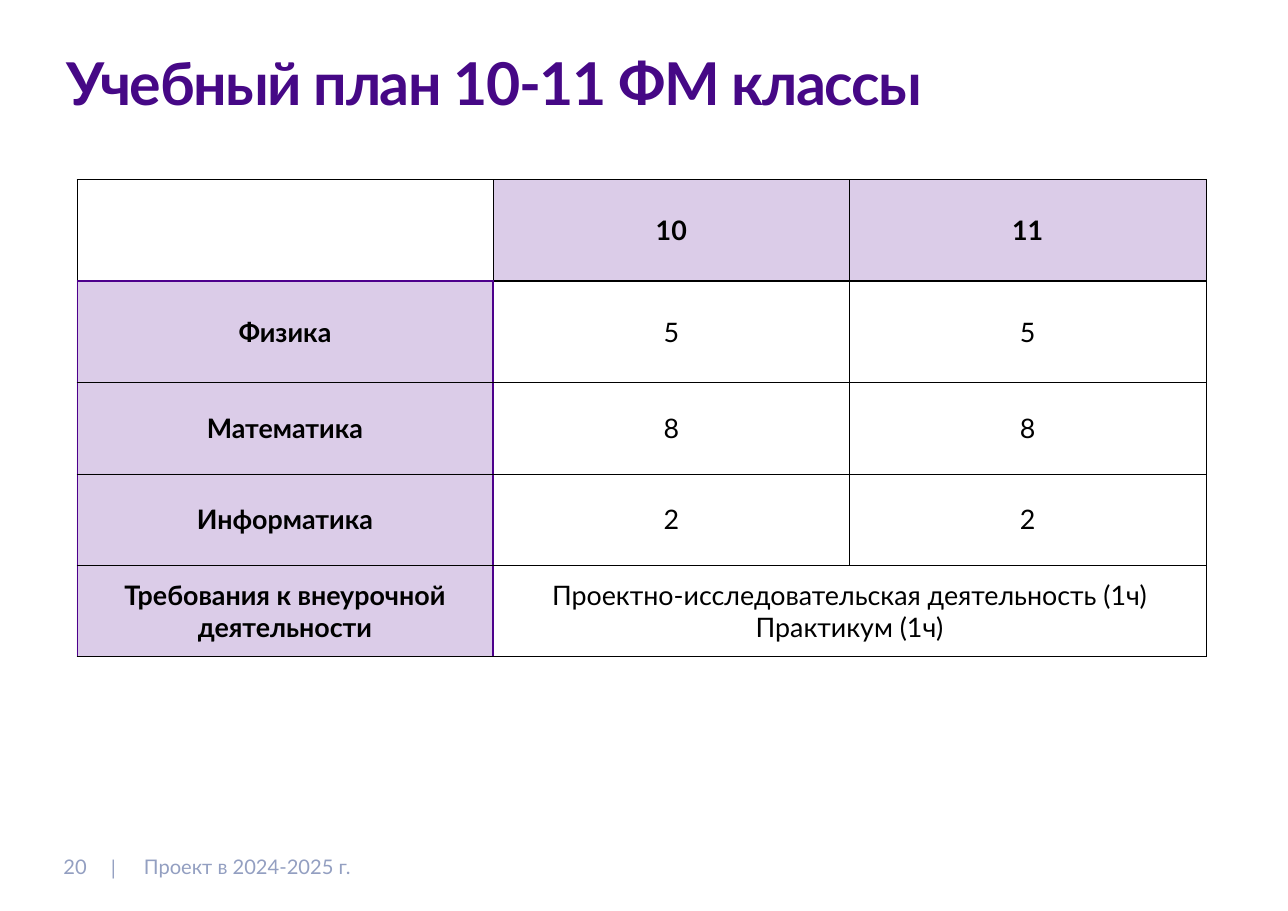
from lxml import etree
from pptx import Presentation
from pptx import util as u
from pptx.dml.color import RGBColor
from pptx.enum import text
from pptx.oxml import ns

FONT = "Lato"
PURPLE, BLACK, GREY = "4D008C", "000000", "939FC1"
CENTER, LEFT = text.PP_ALIGN.CENTER, text.PP_ALIGN.LEFT
TOP, MIDDLE, BOTTOM = (text.MSO_ANCHOR.TOP, text.MSO_ANCHOR.MIDDLE,
                       text.MSO_ANCHOR.BOTTOM)
PAD = u.Inches(0.06)

COLS = [8.62, 7.38, 7.38]
ROWS = [
    (2.1, ["", "10", "11"]),
    (2.1, ["Физика", "5", "5"]),
    (1.89, ["Математика", "8", "8"]),
    (1.89, ["Информатика", "2", "2"]),
    (1.89, ["Требования к внеурочной деятельности",
            "Проектно-исследовательская деятельность (1ч)\nПрактикум (1ч)", ""]),
]


def rgb(color):
    return RGBColor.from_string(color)


def write(tf, content, size, color, bold=False, align=LEFT):
    for i, line in enumerate(content.split("\n")):
        p = tf.add_paragraph() if i else tf.paragraphs[0]
        p.alignment = align
        r = p.add_run()
        r.text = line
        r.font.name, r.font.size, r.font.bold = FONT, u.Pt(size), bold
        r.font.color.rgb = rgb(color)


def set_frame(item, anchor):
    item.margin_left = item.margin_right = PAD
    item.margin_top = item.margin_bottom = PAD
    item.vertical_anchor = anchor


def add_title(s, content):
    sp = s.shapes.title
    sp.left, sp.top = u.Inches(1.32), u.Inches(1.18)
    sp.width, sp.height = u.Inches(24.03), u.Inches(1.92)
    tf = sp.text_frame
    tf.auto_size = text.MSO_AUTO_SIZE.NONE
    set_frame(tf, TOP)
    write(tf, content, 88, "460886", True)
    p = tf.paragraphs[0]
    p.line_spacing = 0.8
    p.runs[0].font._element.set("spc", "-210")


def add_footer(s, content, left, top, width, height, anchor, align):
    sp = s.shapes.add_textbox(*map(u.Inches, (left, top, width, height)))
    tf = sp.text_frame
    tf.word_wrap = True
    tf.auto_size = text.MSO_AUTO_SIZE.NONE
    set_frame(tf, anchor)
    write(tf, content, 30, GREY, align=align)


def set_border(cell, side, color, width):
    ln = etree.SubElement(cell._tc.get_or_add_tcPr(), ns.qn(f"a:ln{side}"),
                          w=str(u.Pt(width)))
    fill = etree.SubElement(ln, ns.qn("a:solidFill"))
    etree.SubElement(fill, ns.qn("a:srgbClr"), val=color)


def fill_cell(cell, color, opacity):
    cell.fill.solid()
    cell.fill.fore_color.rgb = rgb(color)
    clr = cell._tc.tcPr.find(f"{ns.qn('a:solidFill')}/{ns.qn('a:srgbClr')}")
    etree.SubElement(clr, ns.qn("a:alpha"), val=str(opacity * 1000))


def cell_borders(row, col):
    thin = (BLACK, 1)
    side = (PURPLE, 3) if row else thin
    header = (PURPLE if col == 0 else BLACK, 3)
    return {
        "L": ((PURPLE, 1) if row else thin) if col == 0
        else side if col == 1 else thin,
        "R": side if col == 0 else thin,
        "T": header if row == 1 else thin,
        "B": header if row == 0 else thin,
    }


def add_plan(s):
    frame = s.shapes.add_table(len(ROWS), len(COLS), u.Inches(1.59), u.Inches(3.72),
                               u.Inches(sum(COLS)), u.Inches(sum(h for h, _ in ROWS)))
    table = frame.table
    table.first_row = table.horz_banding = False
    for column, width in zip(table.columns, COLS):
        column.width = u.Inches(width)
    for row, (height, labels) in enumerate(ROWS):
        table.rows[row].height = u.Inches(height)
        for col, label in enumerate(labels):
            cell = table.cell(row, col)
            set_frame(cell, MIDDLE)
            for side, (color, width) in cell_borders(row, col).items():
                set_border(cell, side, color, width)
            heading = (row == 0) != (col == 0)
            if heading:
                fill_cell(cell, PURPLE, 20)
            else:
                cell.fill.background()
            if label:
                write(cell.text_frame, label, 40, BLACK, heading, CENTER)
    last = len(ROWS) - 1
    table.cell(last, 1).merge(table.cell(last, 2))


def main():
    prs = Presentation()
    prs.slide_width, prs.slide_height = u.Inches(26.67), u.Inches(18.86)
    s = prs.slides.add_slide(prs.slide_layouts[5])
    add_title(s, "Учебный план 10-11 ФМ классы")
    add_plan(s)
    add_footer(s, "20", 1.17, 17.63, 0.77, 0.62, BOTTOM, CENTER)
    add_footer(s, "|", 2.15, 17.64, 0.4, 0.62, MIDDLE, CENTER)
    add_footer(s, "Проект в 2024-2025 г.", 2.92, 17.64, 19.03, 0.61, MIDDLE, LEFT)
    prs.save("out.pptx")


if __name__ == "__main__":
    main()
